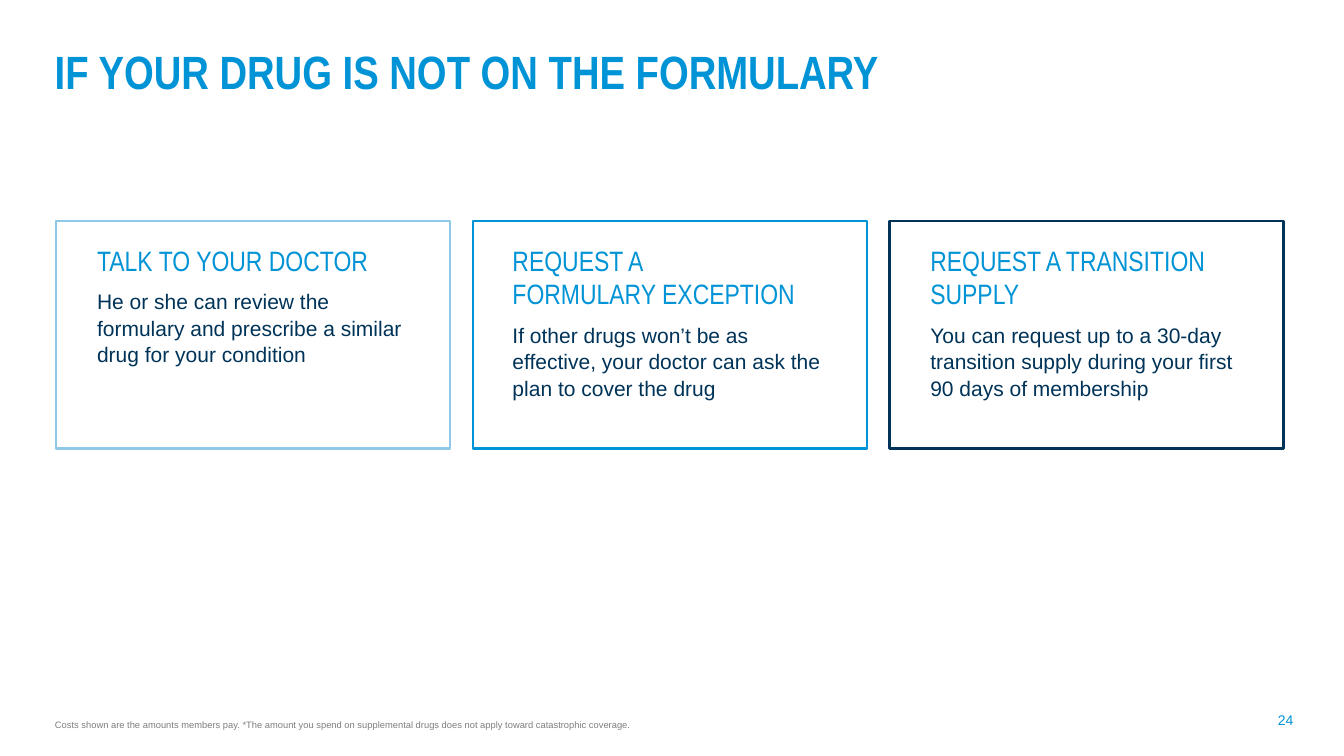
from pptx import Presentation
from pptx.dml.color import RGBColor
from pptx.enum.shapes import MSO_SHAPE
from pptx.enum.text import MSO_ANCHOR, PP_ALIGN
from pptx.util import Pt

RECT = MSO_SHAPE.RECTANGLE
TOP = MSO_ANCHOR.TOP
LEFT = PP_ALIGN.LEFT
BLUE, NAVY, PALE, GRAY = "0093D6", "003358", "8FC9E7", "7E7E7E"
SANS, SLIM = "Arial", "Arial Narrow"

TITLE = "IF YOUR DRUG IS NOT ON THE FORMULARY"
CARDS = [
    (PALE, 35, ["TALK TO YOUR DOCTOR"],
     "He or she can review the formulary and prescribe a similar drug for your condition"),
    (BLUE, 34, ["REQUEST A", "FORMULARY EXCEPTION"],
     "If other drugs won’t be as effective, your doctor can ask the plan to cover the drug"),
    (NAVY, 35, ["REQUEST A TRANSITION SUPPLY"],
     "You can request up to a 30-day transition supply during your first 90 days of membership"),
]
NOTE = ("Costs shown are the amounts members pay. *The amount you spend on "
        "supplemental drugs does not apply toward catastrophic coverage.")
PAGE = "24"

CARD_X, CARD_Y, CARD_W, CARD_H, STEP = 48.2, 189.4, 337.7, 195.1, 357.1
PAD = 34


def color(code):
    return RGBColor.from_string(code)


def set_frame(shape, left, top, right=0):
    frame = shape.text_frame
    frame.word_wrap = True
    frame.vertical_anchor = TOP
    frame.margin_left, frame.margin_top = Pt(left), Pt(top)
    frame.margin_right, frame.margin_bottom = Pt(right), Pt(0)
    return frame


def add_line(frame, text, size, font, code, bold=False, first=True, before=0, pitch=None):
    para = frame.paragraphs[0] if first else frame.add_paragraph()
    para.alignment = LEFT
    if before:
        para.space_before = Pt(before)
    if pitch:
        para.line_spacing = pitch
    run = para.add_run()
    run.text = text
    run.font.size = Pt(size)
    run.font.name = font
    run.font.bold = bold
    run.font.color.rgb = color(code)


def add_label(slide, area, inset, text, size, font, code, bold=False):
    box = slide.shapes.add_textbox(*map(Pt, area))
    add_line(set_frame(box, *inset), text, size, font, code, bold)


def add_card(slide, index, card):
    edge, indent, heads, body = card
    box = slide.shapes.add_shape(
        RECT, Pt(CARD_X + index * STEP), Pt(CARD_Y), Pt(CARD_W), Pt(CARD_H))
    box.shadow.inherit = False
    box.fill.background()
    box.line.color.rgb = color(edge)
    box.line.width = Pt(2)
    frame = set_frame(box, indent, 19, PAD)
    for row, head in enumerate(heads):
        add_line(frame, head, 24, SLIM, BLUE, first=row == 0)
    add_line(frame, body, 18, SANS, NAVY, first=False, before=9.2, pitch=1.05)


def main():
    deck = Presentation()
    deck.slide_width, deck.slide_height = Pt(1152), Pt(648)
    slide = deck.slides.add_slide(deck.slide_layouts[6])
    add_label(slide, (43.9, 27.4, 1064, 85), (3, 9), TITLE, 40, SLIM, BLUE, True)
    for index, card in enumerate(CARDS):
        add_card(slide, index, card)
    add_label(slide, (46.1, 615.6, 500, 11.5), (1, 1), NOTE, 8, SANS, GRAY)
    add_label(slide, (1094.4, 609.1, 15.5, 16.6), (1, 1), PAGE, 12, SANS, BLUE)
    deck.save("out.pptx")


if __name__ == "__main__":
    main()
